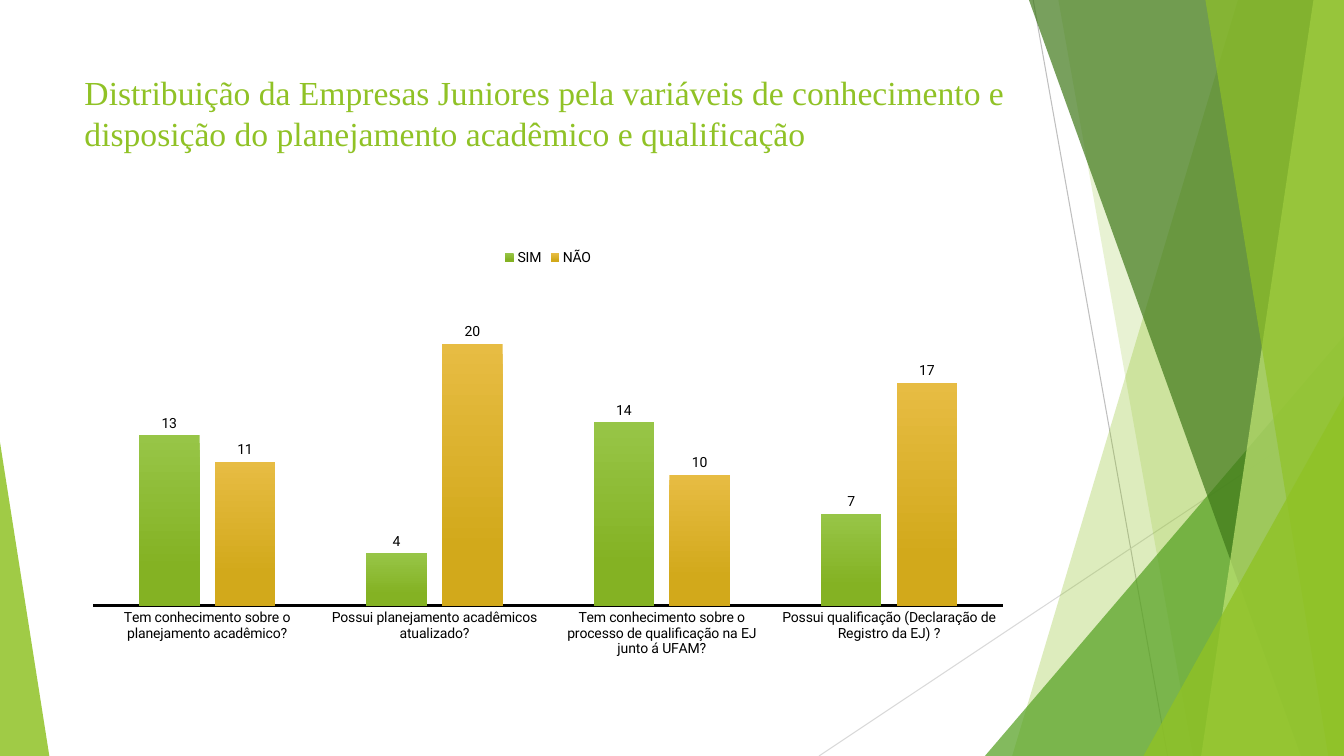
from lxml.etree import SubElement
from pptx import Presentation
from pptx.chart.data import CategoryChartData
from pptx.dml.color import RGBColor
from pptx.enum.chart import XL_CHART_TYPE, XL_LABEL_POSITION, XL_LEGEND_POSITION, XL_TICK_MARK
from pptx.enum.shapes import MSO_CONNECTOR, MSO_SHAPE
from pptx.enum.text import MSO_ANCHOR
from pptx.oxml.ns import qn
from pptx.util import Pt

PX = 9525
WIDTH, HEIGHT = 1280, 720

BLACK = RGBColor(0x00, 0x00, 0x00)
LIME = RGBColor(0x90, 0xC2, 0x26)
PALE_LIME = RGBColor(0xC0, 0xE4, 0x74)
GREEN = RGBColor(0x54, 0xA0, 0x21)
DARK_GREEN = RGBColor(0x3F, 0x78, 0x19)
GRAY = RGBColor(0xBF, 0xBF, 0xBF)
LIGHT_GRAY = RGBColor(0xD9, 0xD9, 0xD9)
GREEN_BARS = (RGBColor(0x97, 0xC5, 0x47), RGBColor(0x84, 0xB2, 0x23))
GOLD_BARS = (RGBColor(0xE7, 0xBC, 0x43), RGBColor(0xD2, 0xA9, 0x1B))

TITLE = ("Distribuição da Empresas Juniores pela variáveis de conhecimento e "
         "disposição do planejamento acadêmico e qualificação")
QUESTIONS = (
    "Tem conhecimento sobre o planejamento acadêmico?",
    "Possui planejamento acadêmicos atualizado?",
    "Tem conhecimento sobre o processo de qualificação na EJ junto á UFAM?",
    "Possui qualificação (Declaração de Registro da EJ) ?",
)
ANSWERS = (
    ("SIM", (13, 4, 14, 7), GREEN_BARS),
    ("NÃO", (11, 20, 10, 17), GOLD_BARS),
)


def px(*lengths):
    return [length * PX for length in lengths]


def add_thin_line(slide, start, end, color):
    line = slide.shapes.add_connector(MSO_CONNECTOR.STRAIGHT, *px(*start, *end))
    line.line.color.rgb = color
    line.line.width = Pt(0.75)
    SubElement(line._element.spPr, qn("a:effectLst"))


def paint(shape, color, opacity):
    """Fill the shape with a see-through colour; opacity is in percent."""
    shape.shadow.inherit = False
    shape.line.fill.background()
    shape.fill.solid()
    shape.fill.fore_color.rgb = color
    color_element = shape._element.spPr.find(qn("a:solidFill"))[0]
    SubElement(color_element, qn("a:alpha"), val=str(opacity * 1000))


def add_band(slide, top_x, bottom_x, color, opacity):
    """Add a full-height band from a slanted left side to the slide's right edge."""
    builder = slide.shapes.build_freeform(top_x, 0, scale=PX)
    builder.add_line_segments([(WIDTH, 0), (WIDTH, HEIGHT), (bottom_x, HEIGHT)])
    paint(builder.convert_to_shape(), color, opacity)


def add_corner(slide, left, top, width, apex, color, opacity):
    """Add a triangle that stands on the slide's bottom edge."""
    triangle = slide.shapes.add_shape(
        MSO_SHAPE.ISOSCELES_TRIANGLE, *px(left, top, width, HEIGHT - top))
    triangle.adjustments[0] = apex
    paint(triangle, color, opacity)


def add_decoration(slide):
    add_thin_line(slide, (984, 0), (1112, HEIGHT), GRAY)
    add_thin_line(slide, (WIDTH, 387), (780, HEIGHT), LIGHT_GRAY)
    add_band(slide, 1179, 964, LIME, 30)
    add_band(slide, 1008, 1136, LIME, 20)
    add_corner(slide, 938, 320, 342, 1, GREEN, 72)
    add_band(slide, 980, 1239, DARK_GREEN, 70)
    add_band(slide, 1251, 1144, PALE_LIME, 70)
    add_band(slide, 1148, 1265, LIME, 65)
    add_corner(slide, 1089, 377, 191, 1, LIME, 80)
    add_corner(slide, 0, 421, 47, 0, LIME, 85)


def add_title(slide):
    box = slide.shapes.add_textbox(*px(71, 64, 902, 95))
    frame = box.text_frame
    frame.word_wrap = True
    frame.vertical_anchor = MSO_ANCHOR.TOP
    run = frame.paragraphs[0].add_run()
    run.text = TITLE
    run.font.name = "Times New Roman"
    run.font.size = Pt(24)
    run.font.color.rgb = LIME


def style_chart_font(font):
    font.name = "Roboto"
    font.size = Pt(10)
    font.color.rgb = BLACK


def style_series(series, colors):
    fill = series.format.fill
    fill.gradient()
    fill.gradient_angle = 270
    for stop, color, position in zip(fill.gradient_stops, colors, (0, 0.78)):
        stop.color.rgb = color
        stop.position = position
    labels = series.data_labels
    labels.show_value = True
    labels.position = XL_LABEL_POSITION.OUTSIDE_END
    style_chart_font(labels.font)


def add_answer_chart(slide):
    data = CategoryChartData()
    data.categories = QUESTIONS
    for name, values, _ in ANSWERS:
        data.add_series(name, values)
    chart = slide.shapes.add_chart(
        XL_CHART_TYPE.COLUMN_CLUSTERED, *px(71, 227, 902, 407), data).chart
    style_chart_font(chart.font)
    chart.has_title = False

    chart.has_legend = True
    chart.legend.position = XL_LEGEND_POSITION.TOP
    chart.legend.include_in_layout = False
    style_chart_font(chart.legend.font)

    plot = chart.plots[0]
    plot.vary_by_categories = False
    plot.gap_width = 150
    plot.overlap = -25
    for series, (_, _, colors) in zip(plot.series, ANSWERS):
        style_series(series, colors)

    category_axis = chart.category_axis
    category_axis.major_tick_mark = XL_TICK_MARK.NONE
    category_axis.format.line.color.rgb = BLACK
    category_axis.format.line.width = Pt(2)
    style_chart_font(category_axis.tick_labels.font)

    value_axis = chart.value_axis
    value_axis.visible = False
    value_axis.has_major_gridlines = False
    value_axis.minimum_scale = 0
    value_axis.maximum_scale = 25


def main():
    presentation = Presentation()
    presentation.slide_width, presentation.slide_height = px(WIDTH, HEIGHT)
    slide = presentation.slides.add_slide(presentation.slide_layouts[6])
    add_decoration(slide)
    add_title(slide)
    add_answer_chart(slide)
    presentation.save("out.pptx")


if __name__ == "__main__":
    main()
